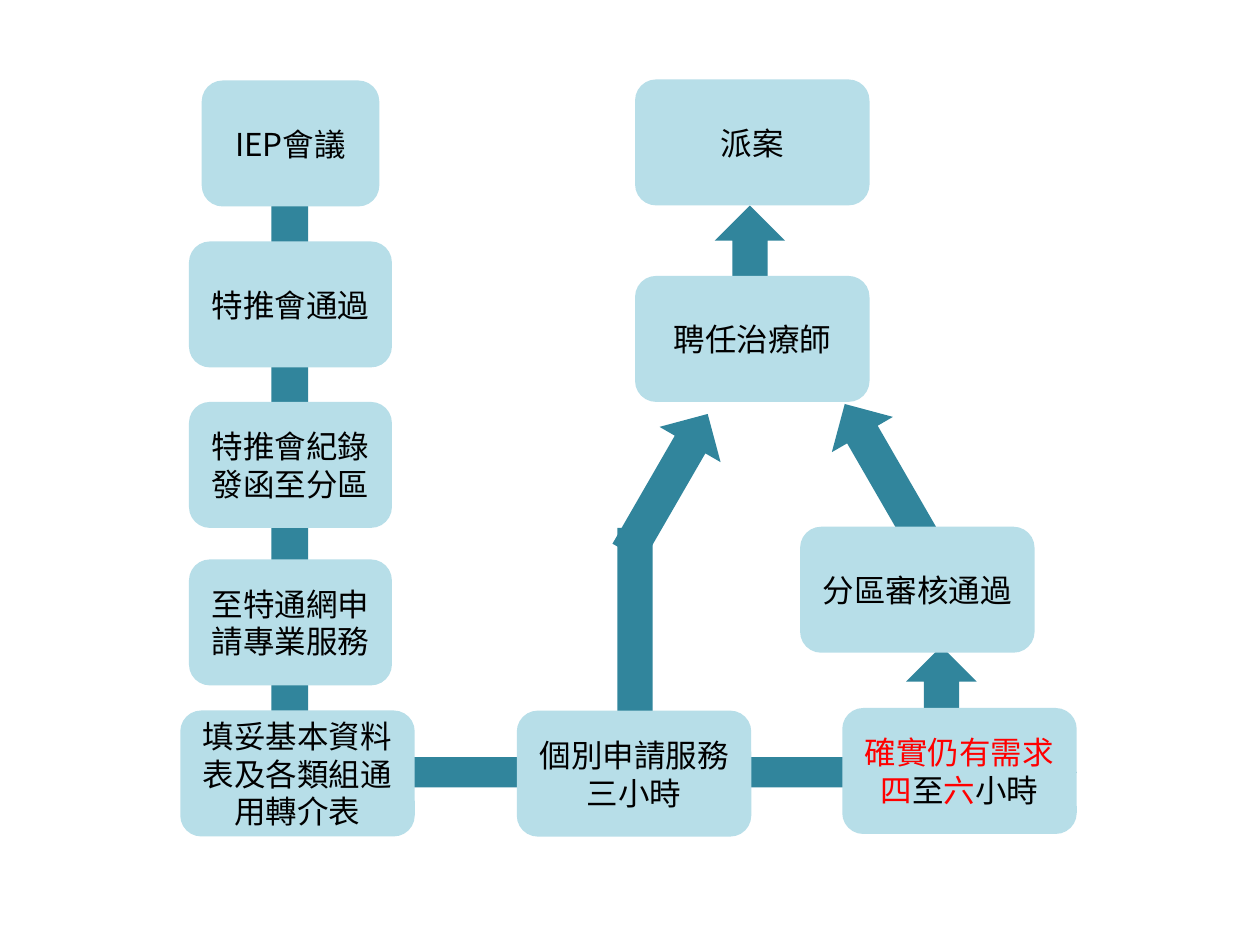
from collections import namedtuple
from dataclasses import dataclass

from pptx import Presentation
from pptx.dml.color import RGBColor
from pptx.enum.shapes import MSO_SHAPE
from pptx.enum.text import MSO_ANCHOR, PP_ALIGN
from pptx.util import Pt

Box = namedtuple("Box", "left top width height")


@dataclass(frozen=True)
class Theme:
    """Colours, type and repeated sizes of the flow chart."""
    step: RGBColor = RGBColor(0xB7, 0xDE, 0xE8)
    arrow: RGBColor = RGBColor(0x31, 0x85, 0x9C)
    text: RGBColor = RGBColor(0, 0, 0)
    alert: RGBColor = RGBColor(0xFF, 0, 0)
    font: str = "Noto Sans CJK SC"
    size: int = 18
    step_width: int = 134
    step_height: int = 72
    arrow_width: float = 40.3


THEME = Theme()


def add_block(page, kind, box, colour):
    """Add a flat filled shape without an outline."""
    shape = page.shapes.add_shape(kind, *(Pt(length) for length in box))
    shape.shadow.inherit = False
    shape.fill.solid()
    shape.fill.fore_color.rgb = colour
    shape.line.fill.background()
    return shape


def add_arrow(page, box, rotation=0, kind=MSO_SHAPE.DOWN_ARROW):
    """Add a block arrow turned by the given angle."""
    add_block(page, kind, box, THEME.arrow).rotation = rotation


def add_step(page, left, top, lines, width=THEME.step_width):
    """Add a rounded step whose lines are lists of (text, colour) spans."""
    box = Box(left, top, width, THEME.step_height)
    frame = add_block(page, MSO_SHAPE.ROUNDED_RECTANGLE, box, THEME.step).text_frame
    frame.word_wrap = True
    frame.vertical_anchor = MSO_ANCHOR.MIDDLE
    for index, line in enumerate(lines):
        para = frame.add_paragraph() if index else frame.paragraphs[0]
        para.alignment = PP_ALIGN.CENTER
        for text, colour in line:
            span = para.add_run()
            span.text = text
            for name, value in {"name": THEME.font, "size": Pt(THEME.size)}.items():
                setattr(span.font, name, value)
            span.font.color.rgb = colour


def plain(text):
    """Return one line in the normal text colour."""
    return [[(text, THEME.text)]]


def draw_hours(page, box):
    """Draw the row of service hours with its arrows."""
    left, top, width, height = box
    add_arrow(page, Box(left, top + 19.5, width, 34.5), kind=MSO_SHAPE.RIGHT_ARROW)
    add_arrow(page, Box(left + 145.5, top - 103, THEME.arrow_width, 143.3))
    add_arrow(page, Box(left + 320.5, top - 35.3, THEME.arrow_width, 76.3), 180)
    add_step(page, left + 98, top + 1.5, plain("個別申請服務三小時"))
    need = [
        [("確實仍有需求", THEME.alert)],
        [("四", THEME.alert), ("至", THEME.text), ("六", THEME.alert), ("小時", THEME.text)],
    ]
    add_step(page, left + width - THEME.step_width, top, need)


def draw_application(page, box):
    """Draw the column of application steps on one long arrow."""
    left, top, width, height = box
    add_arrow(page, Box(left + 41.7, top + 18.8, 41.8, height - 37.5))
    centre = left + 63
    steps = [
        ("IEP會議", 101.5, 0, 0),
        ("特推會通過", 116, 92, 0),
        ("特推會紀錄發函至分區", 116, 183.7, 0),
        ("至特通網申請專業服務", 116, 273.7, 0),
        ("填妥基本資料表及各類組通用轉介表", THEME.step_width, 360, 4),
    ]
    for text, step_width, offset, shift in steps:
        add_step(page, centre + shift - step_width / 2, top + offset, plain(text), step_width)


def draw_assignment(page, box):
    """Draw the review, hiring and assignment steps with their arrows."""
    left, top, width, height = box
    arrows = [(47, 72, 180), (124, 179.3, 150), (0, 185, 210)]
    for shift, offset, rotation in arrows:
        add_arrow(page, Box(left + shift, top + offset, THEME.arrow_width, 91.4), rotation)
    steps = [("派案", 1.5, 0), ("聘任治療師", 1.5, 112.3), ("分區審核通過", 95.8, 255.6)]
    for text, shift, offset in steps:
        add_step(page, left + shift, top + offset, plain(text))


def main():
    """Build the one-slide flow chart and save it."""
    deck = Presentation()
    deck.slide_width, deck.slide_height = Pt(720), Pt(540)
    page = deck.slides.add_slide(deck.slide_layouts[6])
    draw_hours(page, Box(197.3, 404.6, 418, 73.5))
    draw_application(page, Box(103, 46, 134, 432))
    draw_assignment(page, Box(361.4, 45.4, 230, 327.6))
    deck.save("out.pptx")


if __name__ == "__main__":
    main()
